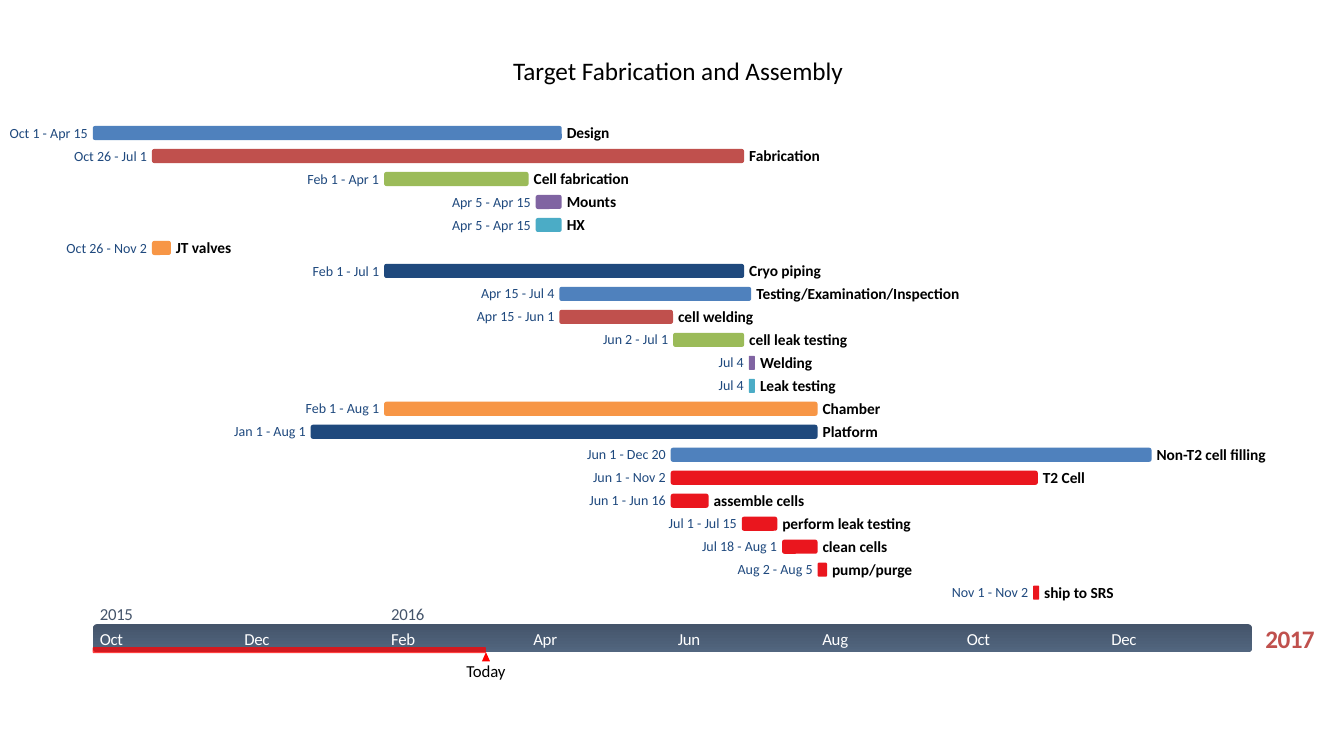
from lxml.etree import SubElement
from pptx import Presentation
from pptx.dml.color import RGBColor
from pptx.enum.shapes import MSO_SHAPE as Preset
from pptx.enum.text import MSO_ANCHOR as Anchor, PP_ALIGN as Align
from pptx.oxml.ns import qn
from pptx.util import Inches, Pt

# Content
TITLE = "Target Fabrication and Assembly"
END_YEAR = "2017"
TODAY = ("Today", "Mar 15")
TICK_MONTHS = ["Oct", "Dec", "Feb", "Apr", "Jun", "Aug", "Oct", "Dec"]
YEAR_TICKS = [("2015", 0), ("2016", 2)]  # label, index of its month tick
MONTH_STARTS = {  # days after October 1, 2015
    "Oct": 0, "Nov": 31, "Dec": 61, "Jan": 92, "Feb": 123, "Mar": 152,
    "Apr": 183, "May": 213, "Jun": 244, "Jul": 274, "Aug": 305, "Sep": 336,
}
TASKS = [  # dates, name, colour, name width, fiscal year of the start
    ("Oct 1 - Apr 15", "Design", "blue", 0.43, 0),
    ("Oct 26 - Jul 1", "Fabrication", "brick", 0.71, 0),
    ("Feb 1 - Apr 1", "Cell fabrication", "green", 0.96, 0),
    ("Apr 5 - Apr 15", "Mounts", "purple", 0.5, 0),
    ("Apr 5 - Apr 15", "HX", "aqua", 0.18, 0),
    ("Oct 26 - Nov 2", "JT valves", "orange", 0.56, 0),
    ("Feb 1 - Jul 1", "Cryo piping", "navy", 0.72, 0),
    ("Apr 15 - Jul 4", "Testing/Examination/Inspection", "blue", 2.03, 0),
    ("Apr 15 - Jun 1", "cell welding", "brick", 0.76, 0),
    ("Jun 2 - Jul 1", "cell leak testing", "green", 0.99, 0),
    ("Jul 4", "Welding", "purple", 0.53, 0),
    ("Jul 4", "Leak testing", "aqua", 0.76, 0),
    ("Feb 1 - Aug 1", "Chamber", "orange", 0.58, 0),
    ("Jan 1 - Aug 1", "Platform", "navy", 0.56, 0),
    ("Jun 1 - Dec 20", "Non-T2 cell filling", "blue", 1.11, 0),
    ("Jun 1 - Nov 2", "T2 Cell", "red", 0.43, 0),
    ("Jun 1 - Jun 16", "assemble cells", "red", 0.92, 0),
    ("Jul 1 - Jul 15", "perform leak testing", "red", 1.29, 0),
    ("Jul 18 - Aug 1", "clean cells", "red", 0.65, 0),
    ("Aug 2 - Aug 5", "pump/purge", "red", 0.81, 0),
    ("Nov 1 - Nov 2", "ship to SRS", "red", 0.69, 1),
]


class Theme:
    font = "Calibri"
    title, axis, name, dates = 18, 12, 11, 10
    colors = dict(
        blue="4F81BD", brick="C0504D", green="9BBB59", purple="8064A2",
        aqua="4BACC6", orange="F79646", navy="1F497D", red="EA161E",
        today="FF0000", slate="44546A", slate_light="52667F",
        date_text="1F497E", black="000000", white="FFFFFF",
    )


# Layout, in inches
AXIS_LEFT, AXIS_TOP, AXIS_WIDTH, AXIS_HEIGHT = 0.92, 6.19, 11.5, 0.28
FISCAL_YEAR = 366
DAY = AXIS_WIDTH / 489.5
ROW_TOP, ROW_STEP, BAR_HEIGHT, MIN_BAR = 1.25, 0.228, 0.14, 0.06
GAP, TICK_INSET, TICK_WIDTH, DATE_CHAR = 0.05, 0.07, 0.35, 0.06


def day_number(date, fiscal_year=0):
    month, day = date.split()
    return MONTH_STARTS[month] + int(day) - 1 + fiscal_year * FISCAL_YEAR


def day_left(day):
    return AXIS_LEFT + day * DAY


def color(key):
    return RGBColor.from_string(Theme.colors[key])


def add_block(page, preset, left, top, width, height, fill=None):
    block = page.shapes.add_shape(
        preset, Inches(left), Inches(top), Inches(width), Inches(height))
    block.shadow.inherit = False
    block.line.fill.background()
    if fill:
        block.fill.solid()
        block.fill.fore_color.rgb = color(fill)
    return block


def add_label(page, text, left, top, width, height, size, ink,
              align=Align.LEFT, bold=False, spacing=0, wrap=False, inset=0):
    box = page.shapes.add_textbox(
        Inches(left), Inches(top), Inches(width), Inches(height))
    frame = box.text_frame
    frame.word_wrap = wrap
    frame.vertical_anchor = Anchor.MIDDLE
    frame.margin_left = frame.margin_right = Inches(inset)
    frame.margin_top = frame.margin_bottom = Inches(inset / 2)
    para = frame.paragraphs[0]
    para.alignment = align
    span = para.add_run()
    span.text = text
    span.font.name, span.font.size = Theme.font, Pt(size)
    span.font.bold = bold
    span.font.color.rgb = color(ink)
    if spacing:
        span.font._element.set("spc", str(spacing))


def add_axis(page):
    band = add_block(page, Preset.ROUNDED_RECTANGLE,
                     AXIS_LEFT, AXIS_TOP, AXIS_WIDTH, AXIS_HEIGHT)
    band.fill.gradient()
    band.fill.gradient_angle = 270
    for stop, key in zip(band.fill.gradient_stops, ("slate", "slate_light")):
        stop.color.rgb = color(key)
    add_label(page, END_YEAR, 12.55, 6.18, 0.49, 0.31, Theme.title, "brick",
              Align.CENTER, bold=True, spacing=-40)

    # Elapsed time and today marker
    text, date = TODAY
    today = day_left(day_number(date))
    elapsed = add_block(page, Preset.ROUNDED_RECTANGLE, AXIS_LEFT, 6.42,
                        today - AXIS_LEFT, 0.06, "today")
    tint = elapsed.fill._xPr.find(qn("a:solidFill"))[0]
    SubElement(tint, qn("a:alpha")).set("val", "75000")
    add_block(page, Preset.ISOSCELES_TRIANGLE,
              today - 0.04, 6.47, 0.08, 0.09, "today")
    add_label(page, text, today - 0.2, 6.56, 0.4, 0.2, Theme.axis, "black",
              Align.CENTER, spacing=-10)

    # Month and year ticks
    tick_lefts = []
    for index, month in enumerate(TICK_MONTHS):
        day = day_number(month + " 1", int(index >= 6))
        tick_lefts.append(day_left(day) + TICK_INSET)
        add_label(page, month, tick_lefts[-1], 6.24, TICK_WIDTH, 0.19,
                  Theme.axis, "white", spacing=-20, wrap=True)
    for year, index in YEAR_TICKS:
        add_label(page, year, tick_lefts[index], 5.99, TICK_WIDTH, 0.2,
                  Theme.axis, "slate", spacing=-20, wrap=True)


def add_task(page, row, dates, name, fill, name_width, fiscal_year):
    first, last = dates.split(" - ")[0], dates.split(" - ")[-1]
    start, end = day_number(first, fiscal_year), day_number(last, fiscal_year)
    if end < start:
        end += FISCAL_YEAR
    left, top = day_left(start), ROW_TOP + row * ROW_STEP
    width = max((end - start + 1) * DAY, MIN_BAR)
    add_block(page, Preset.ROUNDED_RECTANGLE, left, top, width, BAR_HEIGHT, fill)
    date_width = len(dates) * DATE_CHAR
    add_label(page, dates, left - GAP - date_width, top - 0.02, date_width,
              0.17, Theme.dates, "date_text", Align.RIGHT, wrap=True)
    add_label(page, name, left + width + GAP, top - 0.03, name_width + 0.05,
              0.19, Theme.name, "black", bold=True, spacing=-7, wrap=True)


def main():
    deck = Presentation()
    deck.slide_width, deck.slide_height = Inches(13.33), Inches(7.5)
    page = deck.slides.add_slide(deck.slide_layouts[6])
    add_axis(page)
    for row, task in enumerate(TASKS):
        add_task(page, row, *task)
    add_label(page, TITLE, 2.5, 0.5, 8.45, 0.4, Theme.title, "black",
              Align.CENTER, wrap=True, inset=0.1)
    deck.save("out.pptx")


if __name__ == "__main__":
    main()
